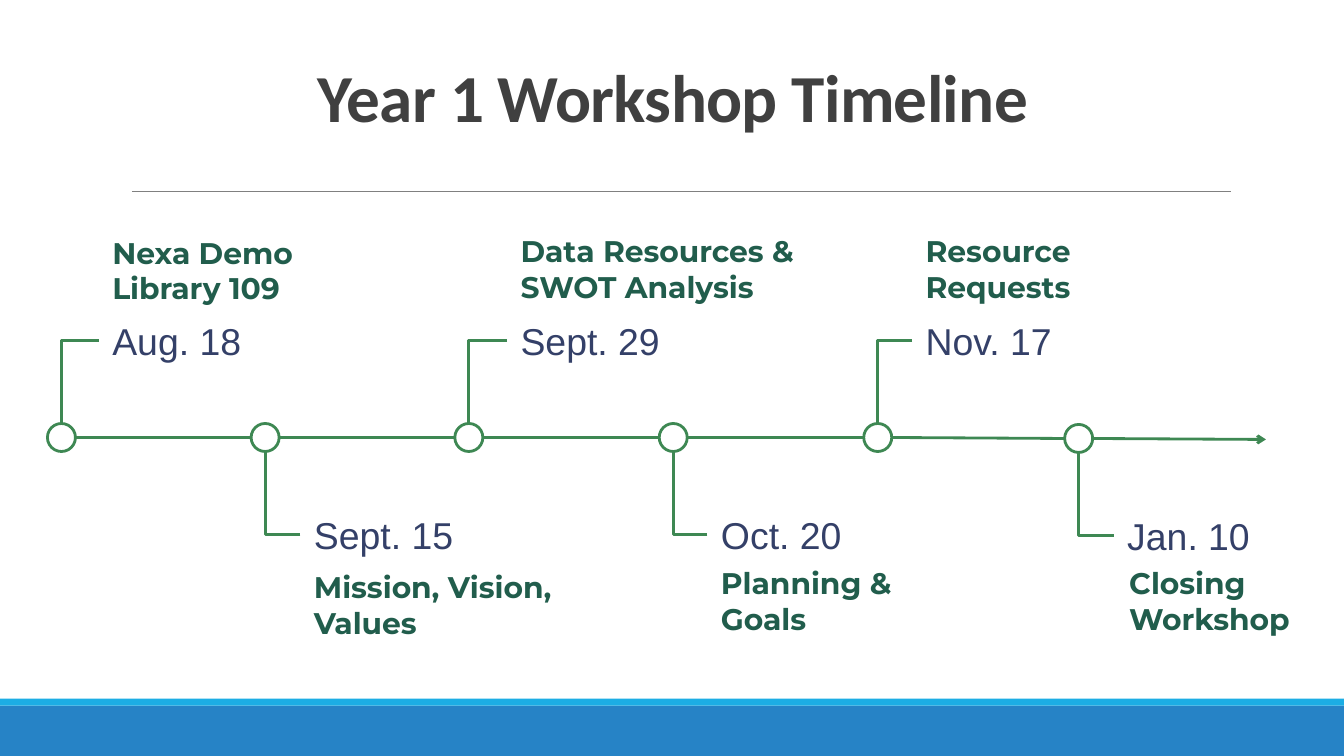
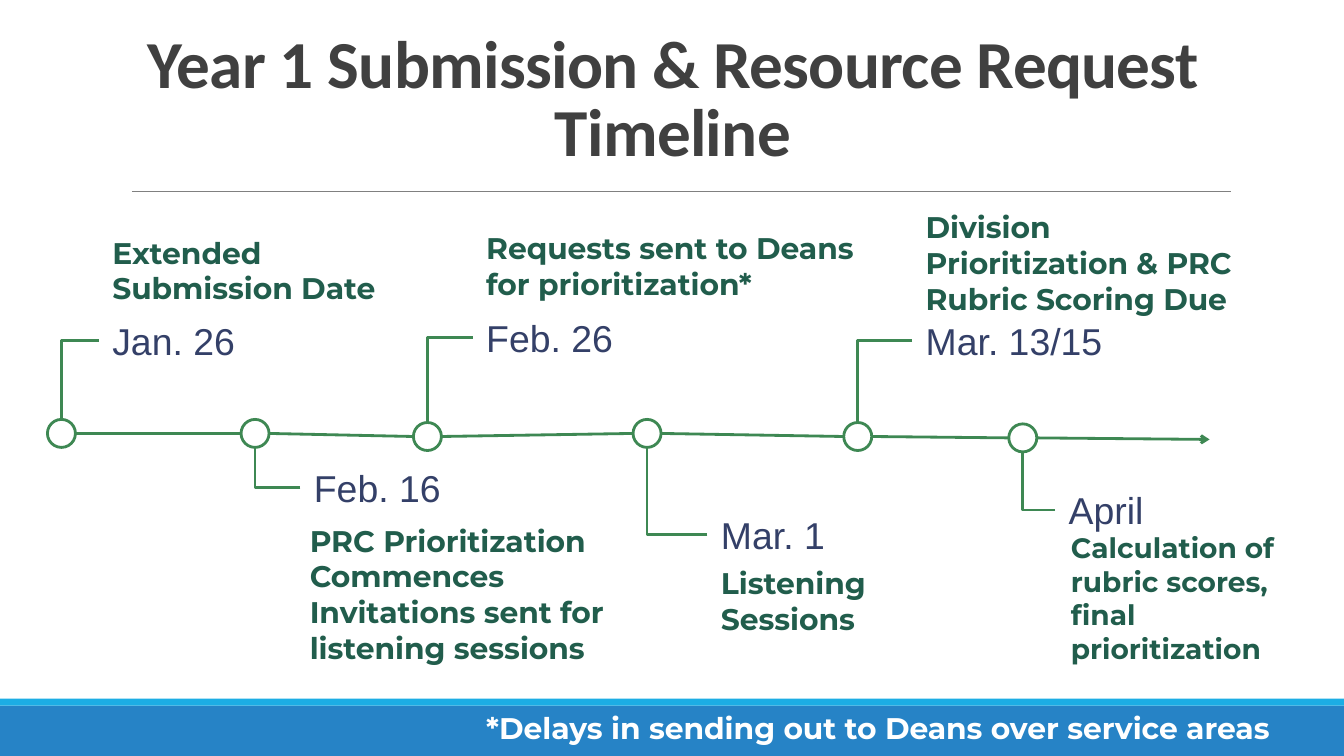
"""Build two workshop timeline slides with a shared title style and footer bands."""
from lxml import etree
from pptx import Presentation
from pptx.dml.color import RGBColor
from pptx.enum import shapes as kinds, text as txt
from pptx.oxml.ns import qn
from pptx.util import Pt

COLORS = {"band": "2683C6", "stripe": "1CADE4", "rule": "808080", "title": "404040",
          "track": "3E8853", "label": "215D4C", "date": "344068", "note": "FFFFFF"}
FRAME = {"word_wrap": True, "auto_size": txt.MSO_AUTO_SIZE.NONE,
         "vertical_anchor": txt.MSO_ANCHOR.MIDDLE,
         "margin_left": Pt(9.6), "margin_right": Pt(9.6),
         "margin_top": Pt(9.6), "margin_bottom": Pt(9.6)}
FONTS = {"title": {"name": "Calibri", "size": Pt(48), "bold": True},
         "label": {"name": "Montserrat", "size": Pt(21.3), "bold": True},
         "date": {"name": "Arial", "size": Pt(26.7), "bold": False},
         "note": {"name": "Montserrat", "size": Pt(21.3), "bold": True}}
WIDTH, HEIGHT = 960, 540
RADIUS = 10
DATE_WIDTH, DATE_HEIGHT = 192, 44.6
RIGHT_EDGE = 940

# Each event: dot centre, date, date's left and middle, label, label's box.
TIMELINES = [
    {"title": "Year 1 Workshop Timeline", "arrow_end": (904.3, 313.9), "events": [
        ((43.9, 312.5), "Aug. 18", (70.6, 243.4),
         "Nexa Demo\nLibrary 109", (70.6, 163.4, 192, 59)),
        ((189.4, 312.5), "Sept. 15", (214.6, 381.6),
         "Mission, Vision, Values", (214.6, 395.3, 192, 72.7)),
        ((334.9, 312.5), "Sept. 29", (362.2, 243.4),
         "Data Resources & SWOT Analysis", (362.2, 163.4, 216.7, 57)),
        ((480.9, 312.5), "Oct. 20", (505.4, 381.6),
         "Planning & Goals", (505.4, 400.3, 161.3, 57)),
        ((627, 312.5), "Nov. 17", (651.6, 243.4),
         "Resource Requests", (651.6, 163.4, 192, 57)),
        ((770.5, 313.2), "Jan. 10", (795.6, 382.3),
         "Closing Workshop", (797, 400.3, 142.6, 57))]},
    {"title": "Year 1 Submission & Resource Request Timeline", "arrow_end": (864, 313.9),
     "note": "*Delays in sending out to Deans over service areas", "events": [
        ((43.9, 309.6), "Jan. 26", (70.6, 243.4),
         "Extended Submission Date", (70.6, 163.4, 219.6, 59)),
        ((182.2, 309.6), "Feb. 16", (214.6, 348.5),
         "PRC Prioritization Commences\nInvitations sent for listening sessions",
         (211.7, 358.6, 242.6, 131)),
        ((305.3, 311.8), "Feb. 26", (337.7, 241.2),
         "Requests sent to Deans for prioritization*", (337.7, 161.3, 289.4, 57)),
        ((462.2, 309.6), "Mar. 1", (505.4, 381.6),
         "Listening Sessions", (505.4, 400.3, 161.3, 57)),
        ((612.7, 311.8), "Mar. 13/15", (651.6, 243.4),
         "Division Prioritization & PRC Rubric Scoring Due", (651.6, 146.9, 253.4, 81.4)),
        ((730.6, 312.8), "April", (753.8, 364.3),
         "Calculation of rubric scores, final prioritization",
         (755.3, 382.3, 192, 89.3), 20)]},
]


def write(slide, words, role, box, size=None, holder=None):
    left, top, width, height = map(Pt, box)
    if holder is None:
        holder = slide.shapes.add_textbox(left, top, width, height)
    holder.left, holder.top, holder.width, holder.height = left, top, width, height
    frame = holder.text_frame
    frame.text = words
    for key, value in FRAME.items():
        setattr(frame, key, value)
    for paragraph in frame.paragraphs:
        font = paragraph.runs[0].font
        for key, value in FONTS[role].items():
            setattr(font, key, value)
        if size:
            font.size = Pt(size)
        font.color.rgb = RGBColor.from_string(COLORS[role])
    return frame


def draw_line(slide, start, end, color="track", weight=2, kind=kinds.MSO_CONNECTOR.STRAIGHT):
    line = slide.shapes.add_connector(kind, *map(Pt, (*start, *end)))
    line.line.color.rgb = RGBColor.from_string(COLORS[color])
    line.line.width = Pt(weight)
    etree.SubElement(line._element.spPr, qn("a:effectLst"))
    return line


deck = Presentation()
deck.slide_width, deck.slide_height = Pt(WIDTH), Pt(HEIGHT)
layout = deck.slide_layouts[5]

for number, timeline in enumerate(TIMELINES):
    slide = deck.slides.add_slide(layout)

    if number == 0:
        backdrop = [draw_line(slide, (94.3, 136.8), (879.1, 136.8), "rule", 0.5)]
        for color, top, height in (("band", 504, 36), ("stripe", 499, 5)):
            strip = slide.shapes.add_shape(kinds.MSO_SHAPE.RECTANGLE,
                                           0, Pt(top), Pt(WIDTH), Pt(height))
            strip.shadow.inherit = False
            strip.fill.solid()
            strip.fill.fore_color.rgb = RGBColor.from_string(COLORS[color])
            strip.line.fill.background()
            backdrop.append(strip)
        for part in backdrop:
            layout.shapes._spTree.append(part._element)

    heading = write(slide, timeline["title"], "title", (75.6, 50.4, 810, 44.6),
                    holder=slide.shapes.title).paragraphs[0]
    heading.alignment = txt.PP_ALIGN.CENTER
    heading.line_spacing = 0.85
    heading.runs[0].font._element.set("spc", "-50")

    events = timeline["events"]
    for (x, y), date, (date_left, date_middle), label, label_box, *label_size in events:
        dot = slide.shapes.add_shape(kinds.MSO_SHAPE.OVAL, Pt(x - RADIUS), Pt(y - RADIUS),
                                     Pt(2 * RADIUS), Pt(2 * RADIUS))
        dot.shadow.inherit = False
        dot.fill.background()
        dot.line.color.rgb = RGBColor.from_string(COLORS["track"])
        dot.line.width = Pt(2)

        edge = y - RADIUS if date_middle < y else y + RADIUS
        branch = draw_line(slide, (date_left, date_middle), (x, edge),
                           kind=kinds.MSO_CONNECTOR.ELBOW)
        branch._element.spPr.find(qn("a:prstGeom")).set("prst", "bentConnector2")

        write(slide, label, "label", label_box, *label_size)
        write(slide, date, "date", (date_left, date_middle - DATE_HEIGHT / 2,
                                    min(DATE_WIDTH, RIGHT_EDGE - date_left), DATE_HEIGHT))

    centres = [event[0] for event in events]
    for (x, y), (next_x, next_y) in zip(centres, centres[1:]):
        draw_line(slide, (x + RADIUS, y), (next_x - RADIUS, next_y))
    last_x, last_y = centres[-1]
    arrow = draw_line(slide, (last_x + RADIUS, last_y), timeline["arrow_end"])
    etree.SubElement(arrow.line._get_or_add_ln(), qn("a:tailEnd"), type="arrow")

    if "note" in timeline:
        write(slide, timeline["note"], "note", (337.7, 504.7, 602, 30.2))

deck.save("out.pptx")
